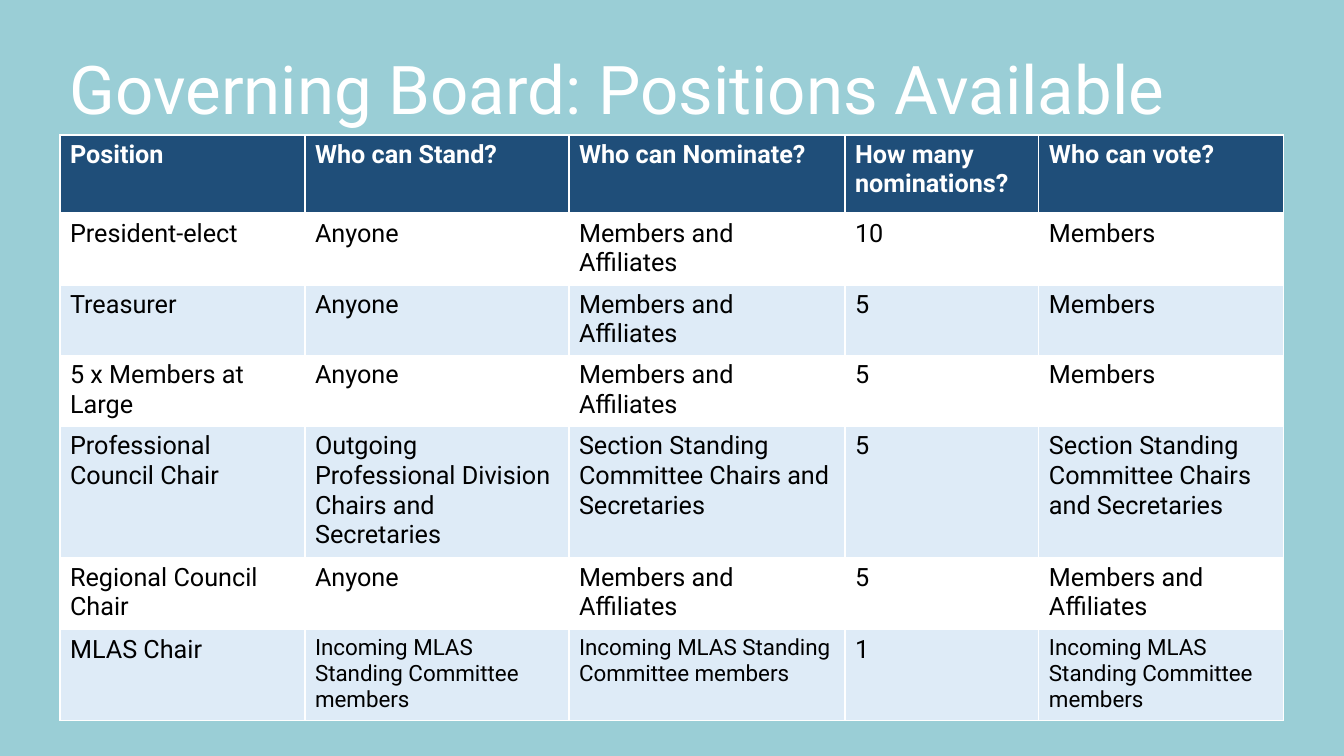
from pptx import Presentation
from pptx.dml.color import RGBColor
from pptx.enum.text import MSO_ANCHOR, MSO_AUTO_SIZE
from pptx.oxml import parse_xml
from pptx.oxml.ns import nsdecls
from pptx.util import Emu, Pt


def px(length):
    return Emu(round(length * 914400 / 100.8))


def color(value):
    return RGBColor.from_string(value)


presentation = Presentation()
presentation.slide_width = px(1344)
presentation.slide_height = px(756)
slide = presentation.slides.add_slide(presentation.slide_layouts[6])
slide.background.fill.solid()
slide.background.fill.fore_color.rgb = color("9ACED6")

title = slide.shapes.add_textbox(px(60), px(38), px(1240), px(231))
title_frame = title.text_frame
title_frame.word_wrap = True
title_frame.auto_size = MSO_AUTO_SIZE.SHAPE_TO_FIT_TEXT
title_frame.vertical_anchor = MSO_ANCHOR.TOP
title_frame.margin_top = px(9)
paragraph = title_frame.paragraphs[0]
paragraph.text = "Governing Board: Positions Available"
paragraph.font.name = "Roboto"
paragraph.font.size = Pt(48)
paragraph.font.color.rgb = color("FFFFFF")

both = "Members and Affiliates"
section = "Section Standing Committee Chairs and Secretaries"
incoming = "Incoming MLAS Standing Committee members"
positions = [
    ["Position", "Who can Stand?", "Who can Nominate?", "How many nominations?", "Who can vote?"],
    ["President-elect", "Anyone", both, "10", "Members"],
    ["Treasurer", "Anyone", both, "5", "Members"],
    ["5 x Members at Large", "Anyone", both, "5", "Members"],
    ["Professional Council Chair", "Outgoing Professional Division Chairs and Secretaries", section, "5", section],
    ["Regional Council Chair", "Anyone", both, "5", both],
    ["MLAS Chair", incoming, incoming, "1", incoming],
]
column_widths = [245, 264, 276, 194, 245]
row_heights = [79, 71, 70, 71, 130, 72, 90]

table = slide.shapes.add_table(
    len(row_heights), len(column_widths), px(60), px(135), px(sum(column_widths)), px(sum(row_heights))
).table
table.horz_banding = False
for column, width in zip(table.columns, column_widths):
    column.width = px(width)
for row, height in zip(table.rows, row_heights):
    row.height = px(height)

for row_index, texts in enumerate(positions):
    header = row_index == 0
    fill = "1F4E79" if header else ("DEEBF7", "FFFFFF")[row_index % 2]
    for column_index, text in enumerate(texts):
        cell = table.cell(row_index, column_index)
        properties = cell._tc.get_or_add_tcPr()
        for side in "LRTB":
            thick = (row_index, side) in ((0, "B"), (1, "T"))
            properties.append(parse_xml(
                f'<a:ln{side} {nsdecls("a")} w="{Pt(3 if thick else 1)}"><a:solidFill>'
                f'<a:srgbClr val="FFFFFF"/></a:solidFill></a:ln{side}>'
            ))
        cell.fill.solid()
        cell.fill.fore_color.rgb = color(fill)
        cell.vertical_anchor = MSO_ANCHOR.TOP
        cell.text = text
        font = cell.text_frame.paragraphs[0].font
        font.name = "Roboto"
        font.size = Pt(16 if text == incoming else 18)
        font.bold = header
        font.color.rgb = color("FFFFFF" if header else "000000")

presentation.save("out.pptx")
